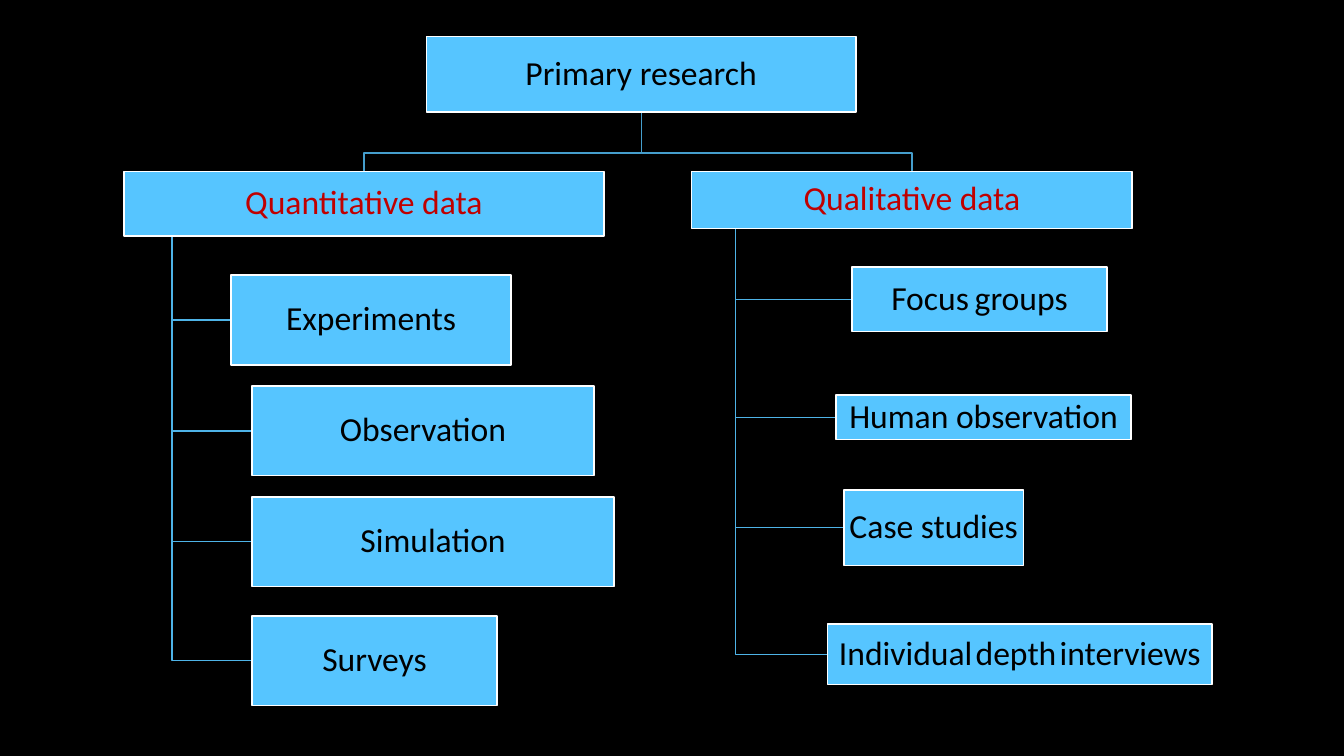
from pptx import Presentation
from pptx.dml.color import RGBColor
from pptx.enum.shapes import MSO_SHAPE
from pptx.enum.text import MSO_ANCHOR, PP_ALIGN
from pptx.util import Inches, Pt

RECTANGLE = MSO_SHAPE.RECTANGLE
MIDDLE = MSO_ANCHOR.MIDDLE
CENTER = PP_ALIGN.CENTER

BLACK = RGBColor(0x00, 0x00, 0x00)
WHITE = RGBColor(0xFF, 0xFF, 0xFF)
RED = RGBColor(0xC0, 0x00, 0x00)
SKY = RGBColor(0x56, 0xC5, 0xFF)
ROOT_LINE = RGBColor(0x45, 0x9E, 0xCC)
BRANCH_LINE = RGBColor(0x4E, 0xB3, 0xE7)

ROOT = ("Primary research", 4.23, 0.36, 4.26, 0.75)
BRANCHES = [
    (("Quantitative data", 1.23, 1.7, 4.76, 0.64), [
        ("Experiments", 2.29, 2.73, 2.78, 0.89),
        ("Observation", 2.5, 3.83, 3.39, 0.89),
        ("Simulation", 2.5, 4.93, 3.59, 0.89),
        ("Surveys", 2.5, 6.11, 2.43, 0.89),
    ]),
    (("Qualitative data", 6.86, 1.7, 4.37, 0.57), [
        ("Focus groups", 8.45, 2.65, 2.53, 0.64),
        ("Human observation", 8.29, 3.92, 2.93, 0.44),
        ("Case studies", 8.37, 4.86, 1.78, 0.75),
        ("Individual depth interviews", 8.21, 6.19, 3.81, 0.6),
    ]),
]
NARROW_SPACES = {"Focus groups": 18, "Individual depth interviews": 10}
TEXT_SIZE = 24
INSET = Inches(0.02)
BAR_Y = 1.52
TRUNK_SHARE = 0.1


def add_run(paragraph, text, size, color):
    run = paragraph.add_run()
    run.text = text
    run.font.name = "Calibri"
    run.font.size = Pt(size)
    run.font.color.rgb = color


def add_box(slide, box, color=BLACK):
    label, *place = box
    shape = slide.shapes.add_shape(RECTANGLE, *map(Inches, place))
    shape.shadow.inherit = False
    shape.fill.solid()
    shape.fill.fore_color.rgb = SKY
    shape.line.color.rgb = WHITE
    shape.line.width = Pt(1)
    frame = shape.text_frame
    frame.word_wrap = True
    frame.vertical_anchor = MIDDLE
    frame.margin_left = frame.margin_right = INSET
    frame.margin_top = frame.margin_bottom = INSET
    paragraph = frame.paragraphs[0]
    paragraph.alignment = CENTER
    paragraph.line_spacing = 0.9
    space_size = NARROW_SPACES.get(label)
    words = label.split() if space_size else [label]
    for index, word in enumerate(words):
        if index:
            add_run(paragraph, " ", space_size, WHITE)
        add_run(paragraph, word, TEXT_SIZE, color)


def add_elbow(slide, points, color):
    start, *corners = [(Inches(x), Inches(y)) for x, y in points]
    builder = slide.shapes.build_freeform(*start)
    builder.add_line_segments(corners, close=False)
    shape = builder.convert_to_shape()
    shape.shadow.inherit = False
    shape.fill.background()
    shape.line.color.rgb = color
    shape.line.width = Pt(1)


def add_branch_lines(slide, heading, methods):
    _, root_left, root_top, root_width, root_height = ROOT
    _, left, top, width, height = heading
    root_x = root_left + root_width / 2
    branch_x = left + width / 2
    add_elbow(slide, [(root_x, root_top + root_height), (root_x, BAR_Y),
                      (branch_x, BAR_Y), (branch_x, top)], ROOT_LINE)
    trunk_x = left + width * TRUNK_SHARE
    for _, box_left, box_top, _, box_height in methods:
        y = box_top + box_height / 2
        add_elbow(slide, [(trunk_x, top + height), (trunk_x, y), (box_left, y)],
                  BRANCH_LINE)


def main():
    presentation = Presentation()
    presentation.slide_width = Inches(13.33)
    presentation.slide_height = Inches(7.5)
    slide = presentation.slides.add_slide(presentation.slide_layouts[6])
    slide.background.fill.solid()
    slide.background.fill.fore_color.rgb = BLACK

    for heading, methods in BRANCHES:
        add_branch_lines(slide, heading, methods)

    add_box(slide, ROOT)
    for heading, methods in BRANCHES:
        add_box(slide, heading, RED)
        for method in methods:
            add_box(slide, method)

    presentation.save("out.pptx")


if __name__ == "__main__":
    main()
